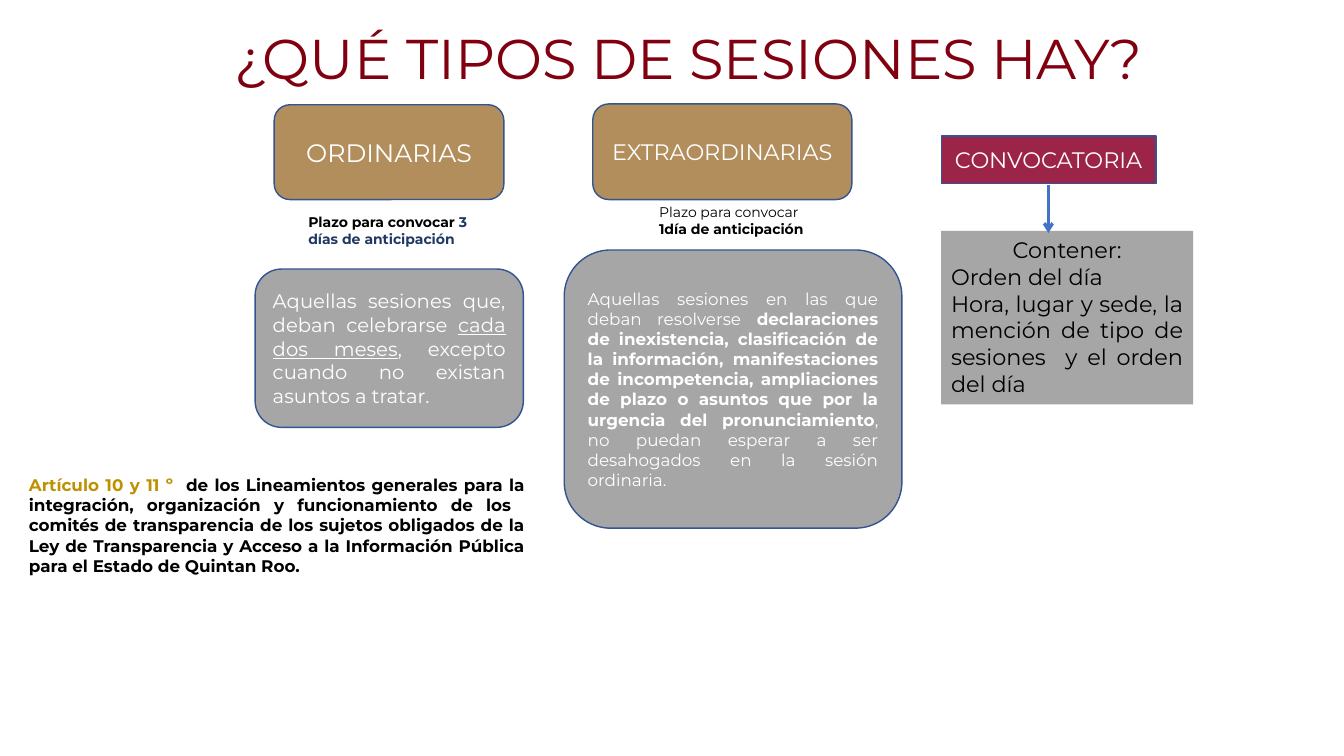
"""Build the slide on the types of committee sessions."""
from dataclasses import dataclass
from typing import Optional

from lxml import etree
from pptx import Presentation
from pptx.dml.color import RGBColor
from pptx.enum import shapes, text
from pptx.oxml import ns
from pptx.util import Cm, Pt

LEFT, MID, JUST = text.PP_ALIGN.LEFT, text.PP_ALIGN.CENTER, text.PP_ALIGN.JUSTIFY
ROUND, RECT = shapes.MSO_SHAPE.ROUNDED_RECTANGLE, shapes.MSO_SHAPE.RECTANGLE


@dataclass(frozen=True)
class Theme:
    """Colours, font and type sizes."""
    font: str = "Montserrat"
    title: str = "800010"
    gold: str = "B38E5D"
    grey: str = "A6A6A6"
    wine: str = "9D2449"
    edge: str = "325491"
    arrow: str = "4472C4"
    navy: str = "203864"
    amber: str = "BF9000"
    black: str = "000000"
    white: str = "FFFFFF"
    huge: int = 40
    large: int = 18
    mid: int = 16
    body: int = 14
    small: int = 12
    tiny: int = 10


T = Theme()


@dataclass(frozen=True)
class Span:
    """A run of text with its own emphasis."""
    words: str
    bold: bool = False
    under: bool = False
    color: Optional[str] = None


@dataclass(frozen=True)
class Para:
    """An aligned paragraph made of spans."""
    spans: tuple[Span, ...]
    align: text.PP_ALIGN = LEFT


@dataclass(frozen=True)
class Box:
    """A text panel, placed in centimetres."""
    place: tuple[float, float, float, float]
    paras: tuple[Para, ...]
    size: int
    color: str = T.white
    form: Optional[shapes.MSO_SHAPE] = None
    fill: Optional[str] = None
    edge: bool = True
    grow: bool = False
    pitch: Optional[float] = None


def plain(words: str, align: text.PP_ALIGN = MID) -> Para:
    """Return a paragraph of one span."""
    return Para((Span(words),), align)


BOXES = (
    Box((2.74, 0.46, 29.21, 2.16), (plain("¿QUÉ TIPOS DE SESIONES HAY?"),),
        T.huge, T.title, pitch=0.9),
    Box((6.91, 2.64, 5.79, 2.39), (plain("ORDINARIAS"),), T.large, form=ROUND, fill=T.gold),
    Box((14.94, 2.62, 6.53, 2.41), (plain("EXTRAORDINARIAS"),), T.mid, form=ROUND, fill=T.gold),
    Box((7.52, 5.26, 4.6, 1.12), (Para((
        Span("Plazo para convocar ", bold=True),
        Span("3 días de anticipación", bold=True, color=T.navy))),),
        T.tiny, T.black, grow=True),
    Box((16.36, 5, 4.6, 1.12), (Para((
        Span("Plazo para convocar "),
        Span("1día de anticipación", bold=True))),),
        T.tiny, T.black, grow=True),
    Box((6.43, 6.78, 6.76, 3.99), (Para((
        Span("Aquellas sesiones que, deban celebrarse "),
        Span("cada dos meses", under=True),
        Span(", excepto cuando no existan asuntos a tratar.")), JUST),),
        T.body, form=ROUND, fill=T.grey),
    Box((14.22, 6.3, 8.51, 7.01), (Para((
        Span("Aquellas sesiones en las que deban resolverse "),
        Span("declaraciones de inexistencia, clasificación de la información, "
             "manifestaciones de incompetencia, ampliaciones de plazo o asuntos "
             "que por la urgencia del pronunciamiento", bold=True),
        Span(", no puedan esperar a ser desahogados en la sesión ordinaria.")), JUST),),
        T.small, form=ROUND, fill=T.grey),
    Box((0.48, 11.84, 13, 2.82), (Para((
        Span("Artículo 10 y 11 º", bold=True, color=T.amber),
        Span("  de los Lineamientos generales para la integración, organización y "
             "funcionamiento de los  comités de transparencia de los sujetos obligados "
             "de la Ley de Transparencia y Acceso a la Información Pública para el "
             "Estado de Quintan Roo.", bold=True)), JUST),),
        T.small, T.black, grow=True),
    Box((23.72, 3.43, 5.41, 1.19), (plain("CONVOCATORIA"),), T.mid, form=RECT, fill=T.wine),
    Box((23.72, 5.82, 6.35, 4.37), (
        plain("Contener:"),
        plain("Orden del día", JUST),
        plain("Hora, lugar y sede, la mención de tipo de sesiones  y el orden del día", JUST)),
        T.mid, T.black, form=RECT, fill=T.grey, edge=False, grow=True),
)


def rgb(code: str) -> RGBColor:
    """Turn a hex code into a colour."""
    return RGBColor.from_string(code)


def write(frame, box: Box) -> None:
    """Fill a text frame with the paragraphs of a box."""
    frame.word_wrap = True
    frame.auto_size = (text.MSO_AUTO_SIZE.SHAPE_TO_FIT_TEXT if box.grow
                       else text.MSO_AUTO_SIZE.NONE)
    frame.vertical_anchor = text.MSO_ANCHOR.TOP if box.grow else text.MSO_ANCHOR.MIDDLE
    for rank, para in enumerate(box.paras):
        line = frame.add_paragraph() if rank else frame.paragraphs[0]
        line.alignment = para.align
        if box.pitch:
            line.line_spacing = box.pitch
        line.font.name = T.font
        line.font.size = Pt(box.size)
        line.font.color.rgb = rgb(box.color)
        line.font.bold = all(span.bold for span in para.spans)
        for span in para.spans:
            run = line.add_run()
            run.text = span.words
            if span.bold != line.font.bold:
                run.font.bold = span.bold
            if span.under:
                run.font.underline = True
            if span.color:
                run.font.color.rgb = rgb(span.color)


def draw(slide, box: Box) -> None:
    """Add one box to the slide."""
    place = [Cm(side) for side in box.place]
    if box.form is None:
        shape = slide.shapes.add_textbox(*place)
    else:
        shape = slide.shapes.add_shape(box.form, *place)
        shape.shadow.inherit = False
        shape.fill.solid()
        shape.fill.fore_color.rgb = rgb(box.fill)
        if box.edge:
            shape.line.color.rgb = rgb(T.edge)
            shape.line.width = Pt(1)
        else:
            shape.line.fill.background()
    write(shape.text_frame, box)


def point(slide, left: float, top: float, end: float) -> None:
    """Add a downward arrow."""
    link = slide.shapes.add_connector(
        shapes.MSO_CONNECTOR.STRAIGHT, Cm(left), Cm(top), Cm(left), Cm(end))
    link.line.color.rgb = rgb(T.arrow)
    link.line.width = Pt(2.25)
    etree.SubElement(link.line._get_or_add_ln(), ns.qn("a:tailEnd"), type="arrow")
    etree.SubElement(link._element.spPr, ns.qn("a:effectLst"))


def main() -> None:
    """Build and save the slide."""
    deck = Presentation()
    deck.slide_width, deck.slide_height = Cm(33.87), Cm(19.05)
    slide = deck.slides.add_slide(deck.slide_layouts[6])
    for box in BOXES:
        draw(slide, box)
    point(slide, 26.42, 4.65, 5.87)
    deck.save("out.pptx")


if __name__ == "__main__":
    main()
